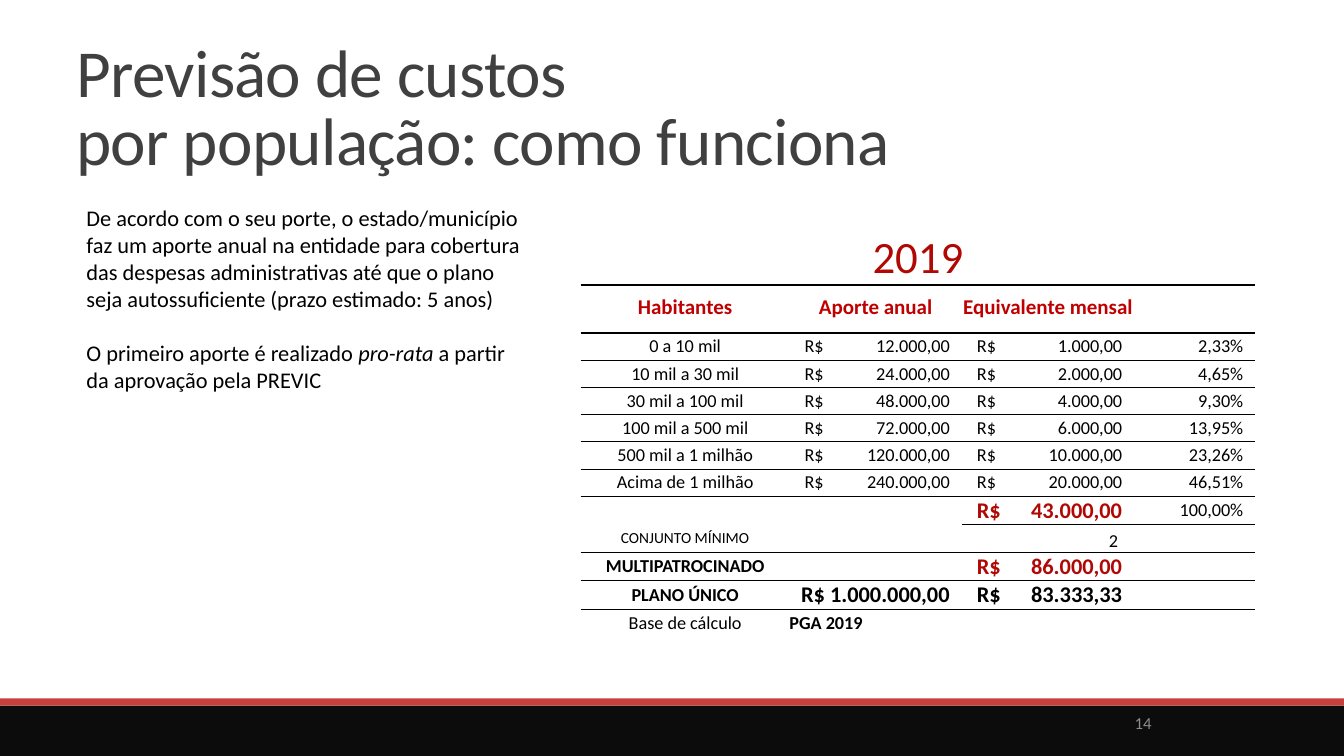
from lxml import etree
from pptx import Presentation
from pptx.dml.color import RGBColor
from pptx.enum.shapes import MSO_SHAPE
from pptx.enum.text import MSO_ANCHOR, PP_ALIGN
from pptx.oxml.ns import qn
from pptx.util import Inches, Pt

LEFT, CENTER, RIGHT = PP_ALIGN.LEFT, PP_ALIGN.CENTER, PP_ALIGN.RIGHT
MIDDLE, BOTTOM = MSO_ANCHOR.MIDDLE, MSO_ANCHOR.BOTTOM
BLACK, RED, HEADER_RED = "000000", "B00905", "C00000"
PLAIN_TABLE = "{2D5ABB26-0587-4C30-8999-92F81FD0307C}"


def rgb(value):
    return RGBColor.from_string(value)


def style(para, size, color=BLACK, bold=False, align=LEFT):
    para.alignment = align
    para.font.name = "Calibri"
    para.font.size = Pt(size)
    para.font.bold = bold
    para.font.color.rgb = rgb(color)


deck = Presentation()
deck.slide_width = Inches(13.33)
deck.slide_height = Inches(7.5)
page = deck.slides.add_slide(deck.slide_layouts[6])

for top, height, color in [(7, 0.5, "0C0C0C"), (6.93, 0.07, "C6413E")]:
    band = page.shapes.add_shape(MSO_SHAPE.RECTANGLE, 0, Inches(top), Inches(13.33), Inches(height))
    band.shadow.inherit = False
    band.fill.solid()
    band.fill.fore_color.rgb = rgb(color)
    band.line.fill.background()

number = page.shapes.add_textbox(Inches(9.19), Inches(6.97), Inches(2.33), Inches(0.4)).text_frame
number.word_wrap = True
number.vertical_anchor = MIDDLE
number.text = "14"
style(number.paragraphs[0], 12, "8C8C8C", align=RIGHT)

body = page.shapes.add_textbox(Inches(0.76), Inches(1.98), Inches(10), Inches(1.99)).text_frame
body.word_wrap = True
body.text = (
    "De acordo com o seu porte, o estado/município\v"
    "faz um aporte anual na entidade para cobertura\v"
    "das despesas administrativas até que o plano\v"
    "seja autossuficiente (prazo estimado: 5 anos)"
)
style(body.paragraphs[0], 16)
start = body.add_paragraph()
start.text = "O primeiro aporte é realizado "
span = start.add_run()
span.text = "pro-rata"
span.font.italic = True
start.add_run().text = " a partir"
start.add_line_break()
start.add_run().text = "da aprovação pela PREVIC"
start.space_before = Pt(19.5)
style(start, 16)

rows = [
    ["2019", "", "", ""],
    ["Habitantes", "Aporte anual", "Equivalente mensal", ""],
    ["0 a 10 mil", "R$\t12.000,00", "R$\t1.000,00", "2,33%"],
    ["10 mil a 30 mil", "R$\t24.000,00", "R$\t2.000,00", "4,65%"],
    ["30 mil a 100 mil", "R$\t48.000,00", "R$\t4.000,00", "9,30%"],
    ["100 mil a 500 mil", "R$\t72.000,00", "R$\t6.000,00", "13,95%"],
    ["500 mil a 1 milhão", "R$\t120.000,00", "R$\t10.000,00", "23,26%"],
    ["Acima de 1 milhão", "R$\t240.000,00", "R$\t20.000,00", "46,51%"],
    ["", "", "R$\t43.000,00", "100,00%"],
    ["CONJUNTO MÍNIMO", "", "2 ", ""],
    ["MULTIPATROCINADO", "", "R$\t86.000,00", ""],
    ["PLANO ÚNICO", "R$ 1.000.000,00", "R$\t83.333,33", ""],
    ["Base de cálculo", "PGA 2019", "", ""],
]
special = {
    (0, 0): (32, RED, False),
    (8, 2): (16, RED, True),
    (9, 0): (11, BLACK, False),
    (10, 0): (13, BLACK, True),
    (10, 2): (16, RED, True),
    (11, 0): (13, BLACK, True),
    (11, 1): (16, BLACK, True),
    (11, 2): (16, BLACK, True),
    (12, 1): (13, BLACK, True),
}
special.update({(1, col): (15, HEADER_RED, True) for col in range(3)})
rule_below = {(row, col): 0.5 for row in (2, 3, 4, 5, 6, 9, 10, 11) for col in range(4)}
rule_below.update({(0, col): 1.5 for col in range(4)})
rule_below.update({(7, col): 0.5 for col in (2, 3)})

frame = page.shapes.add_table(13, 4, Inches(5.76), Inches(2.29), Inches(6.69), Inches(3.99))
table = frame.table
table.first_row = False
table.horz_banding = False
table._tbl.tblPr.find(qn("a:tableStyleId")).text = PLAIN_TABLE
for column, width in zip(table.columns, [2.07, 1.71, 1.71, 1.2]):
    column.width = Inches(width)
for line, height in zip(table.rows, [0.47, 0.48] + [0.27] * 6 + [0.28] * 5):
    line.height = Inches(height)
table.cell(0, 0).merge(table.cell(0, 3))

for row, texts in enumerate(rows):
    for col, text in enumerate(texts):
        cell = table.cell(row, col)
        cell.fill.background()
        cell.vertical_anchor = BOTTOM if row == 0 or (col == 2 and row in (8, 9, 10)) else MIDDLE
        centered = col == 0 or row < 2
        money = "\t" in text
        note = (row, col) == (12, 1)
        cell.margin_left = Inches(0.15 if money else 0)
        cell.margin_right = Inches(0 if centered or note else 0.05 if money else 0.12)
        cell.margin_top = cell.margin_bottom = 0

        para = cell.text_frame.paragraphs[0]
        para.text = text
        if row == 1:
            para.line_spacing = 0.75
        if money:
            tabs = etree.SubElement(para._p.get_or_add_pPr(), qn("a:tabLst"))
            etree.SubElement(tabs, qn("a:tab"), pos=str(Inches(1.44)), algn="r")
        align = CENTER if centered else LEFT if money or note else RIGHT
        size, color, bold = special.get((row, col), (13, BLACK, False))
        style(para, size, color, bold, align)
        if not text:
            etree.SubElement(para._p, qn("a:endParaRPr"), sz="1300")

        props = cell._tc.get_or_add_tcPr()
        edges = [("a:lnT", rule_below.get((row - 1, col))), ("a:lnB", rule_below.get((row, col)))]
        for place, (tag, points) in enumerate([edge for edge in edges if edge[1]]):
            border = etree.Element(qn(tag), w=str(Pt(points)))
            fill = etree.SubElement(border, qn("a:solidFill"))
            etree.SubElement(fill, qn("a:srgbClr"), val=BLACK)
            props.insert(place, border)

title = page.shapes.add_textbox(Inches(0.66), Inches(0.24), Inches(11), Inches(1.59)).text_frame
title.word_wrap = True
title.vertical_anchor = BOTTOM
title.text = "Previsão de custos\vpor população: como funciona"
title.paragraphs[0].line_spacing = 0.85
style(title.paragraphs[0], 48, "404040")
for span in title.paragraphs[0].runs:
    span._r.get_or_add_rPr().set("spc", "-50")

deck.save("out.pptx")
